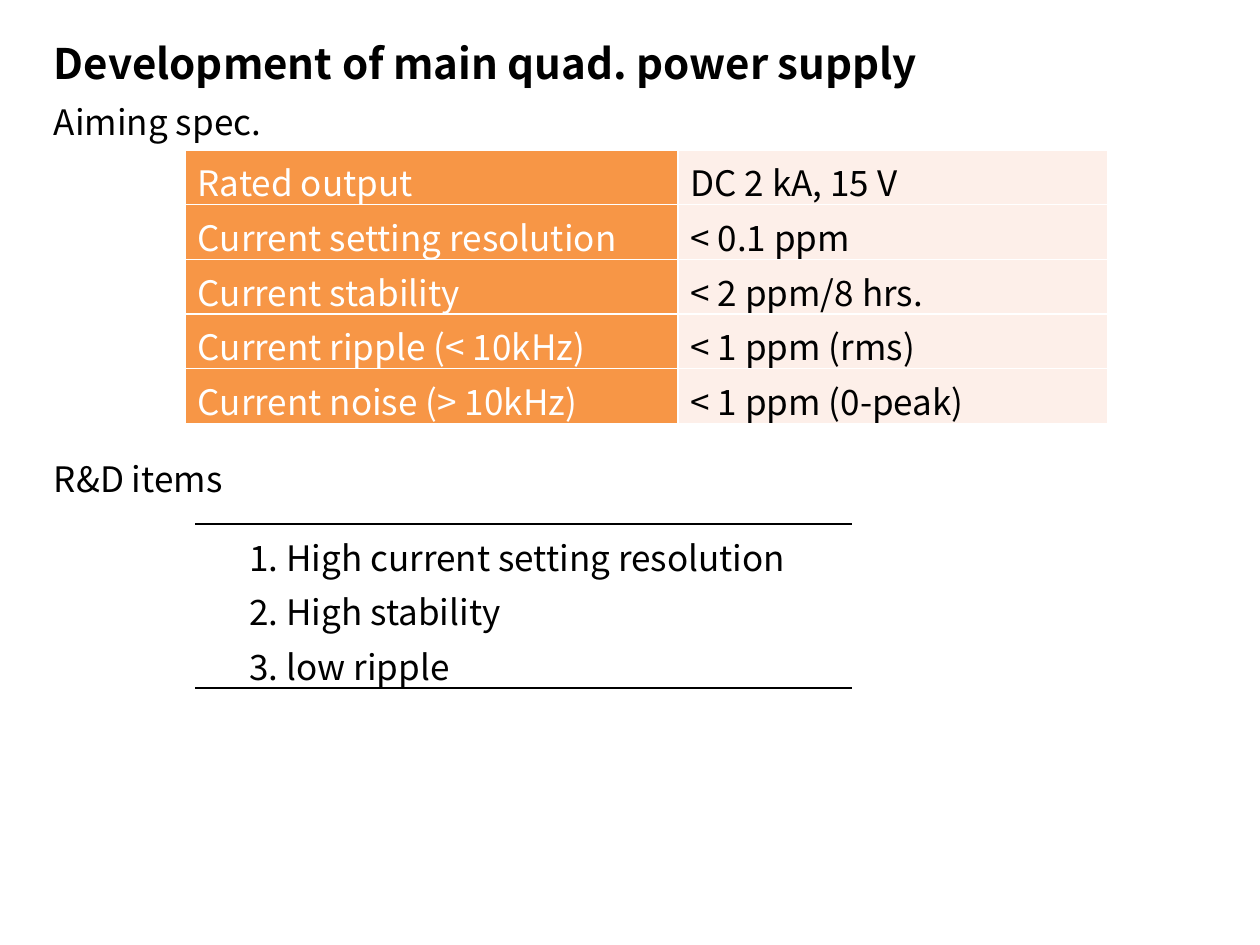
import pptx
import pptx.dml.color
import pptx.enum.text
import pptx.oxml.ns
import pptx.util
from lxml import etree
from pptx.util import Inches

FONT = "Noto Sans CJK JP"
BLACK = pptx.dml.color.RGBColor(0x00, 0x00, 0x00)
WHITE = pptx.dml.color.RGBColor(0xFF, 0xFF, 0xFF)
ORANGE = pptx.dml.color.RGBColor(0xF7, 0x96, 0x46)
PALE_ORANGE = pptx.dml.color.RGBColor(0xFD, 0xEF, 0xE9)

LEFT = 0.33
ROW_HEIGHT = 0.43

SPECS = [
    ("Rated output", "DC 2 kA, 15 V"),
    ("Current setting resolution", "< 0.1 ppm"),
    ("Current stability", "< 2 ppm/8 hrs."),
    ("Current ripple (< 10kHz)", "< 1 ppm (rms)"),
    ("Current noise (> 10kHz)", "< 1 ppm (0-peak)"),
]
RD_ITEMS = ["1. High current setting resolution", "2. High stability", "3. low ripple"]


def write(text_frame, text, color=BLACK, size=20, bold=False):
    run = text_frame.paragraphs[0].add_run()
    run.text = text
    run.font.name = FONT
    run.font.size = pptx.util.Pt(size)
    run.font.bold = bold
    run.font.color.rgb = color


def add_label(slide, text, top, width, height, size=20, bold=False, wrap=True):
    label = slide.shapes.add_textbox(
        Inches(LEFT), Inches(top), Inches(width), Inches(height))
    label.text_frame.word_wrap = wrap
    label.text_frame.auto_size = pptx.enum.text.MSO_AUTO_SIZE.SHAPE_TO_FIT_TEXT
    write(label.text_frame, text, size=size, bold=bold)


def set_borders(cell, colors):
    """Draw 1 pt borders on the sides in colors (L, R, T, B); hide the others."""
    qn = pptx.oxml.ns.qn
    properties = cell._tc.get_or_add_tcPr()
    for side in "LRTB":
        line = etree.SubElement(properties, qn(f"a:ln{side}"), w="12700")
        if side in colors:
            fill = etree.SubElement(line, qn("a:solidFill"))
            etree.SubElement(fill, qn("a:srgbClr"), val=str(colors[side]))
        else:
            etree.SubElement(line, qn("a:noFill"))


def add_plain_table(slide, left, top, column_widths, row_count):
    table = slide.shapes.add_table(
        row_count, len(column_widths), Inches(left), Inches(top),
        Inches(sum(column_widths)), Inches(ROW_HEIGHT * row_count)).table
    table.first_row = False
    table.horz_banding = False
    for column, width in zip(table.columns, column_widths):
        column.width = Inches(width)
    return table


def add_spec_table(slide):
    table = add_plain_table(slide, 1.47, 1.19, [3.91, 3.41], len(SPECS))
    column_colors = [(ORANGE, WHITE), (PALE_ORANGE, BLACK)]
    for row, spec in enumerate(SPECS):
        for column, (fill_color, text_color) in enumerate(column_colors):
            cell = table.cell(row, column)
            set_borders(cell, dict.fromkeys("LRTB", WHITE))
            cell.fill.solid()
            cell.fill.fore_color.rgb = fill_color
            write(cell.text_frame, spec[column], text_color)


def add_rd_table(slide):
    """List the R&D items between a top rule and a bottom rule."""
    table = add_plain_table(slide, 1.55, 4.16, [5.21], len(RD_ITEMS))
    rules = {0: {"T": BLACK}, len(RD_ITEMS) - 1: {"B": BLACK}}
    for row, item in enumerate(RD_ITEMS):
        cell = table.cell(row, 0)
        set_borders(cell, rules.get(row, {}))
        cell.fill.background()
        cell.margin_left = Inches(0.43)
        write(cell.text_frame, item)


def main():
    presentation = pptx.Presentation()
    presentation.slide_width = Inches(10)
    presentation.slide_height = Inches(7.5)
    slide = presentation.slides.add_slide(presentation.slide_layouts[6])

    add_label(slide, "Development of main quad. power supply", 0.25, 7.95, 0.5,
              size=24, bold=True, wrap=False)
    add_label(slide, "Aiming spec.", 0.75, 2.16, 0.44)
    add_spec_table(slide)
    add_label(slide, "R&D items", 3.58, 2.16, 0.44)
    add_rd_table(slide)

    presentation.save("out.pptx")


if __name__ == "__main__":
    main()
